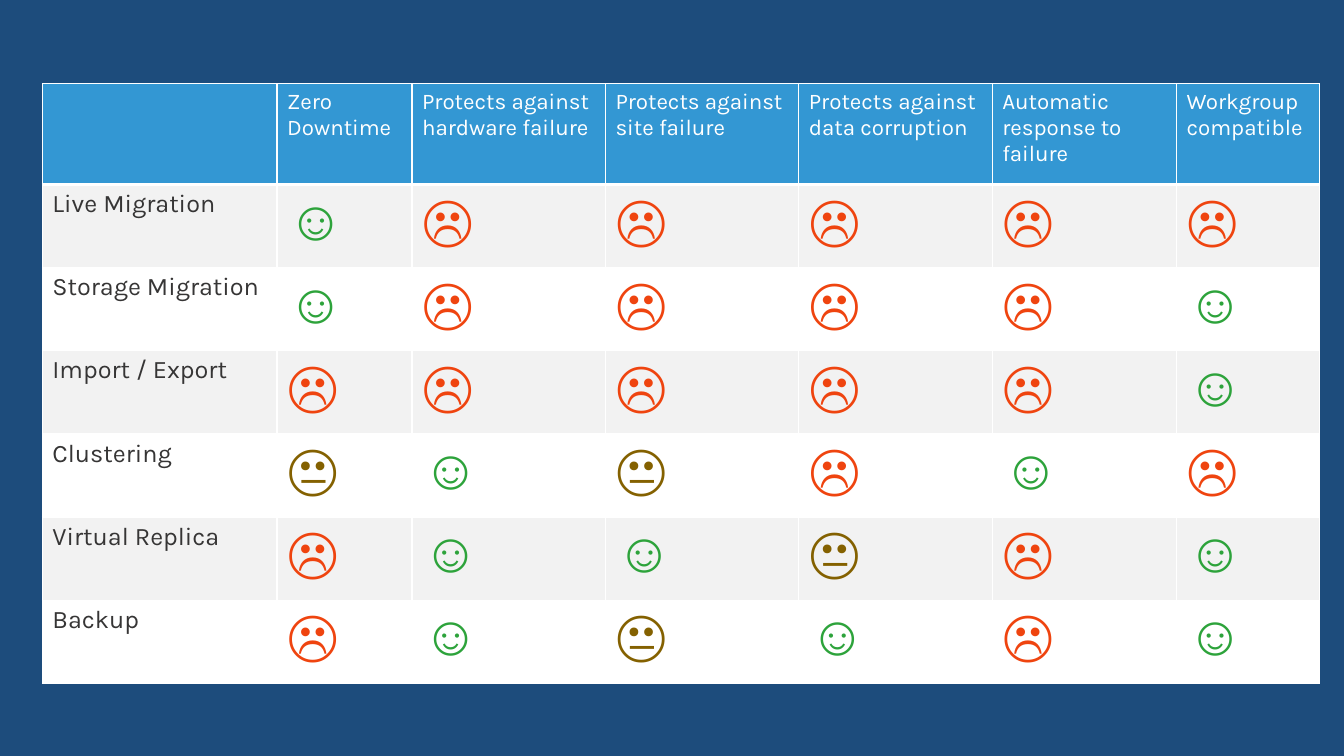
from dataclasses import dataclass

import pptx
import pptx.dml.color
import pptx.oxml
import pptx.oxml.ns
import pptx.util
from pptx.util import Inches


@dataclass(frozen=True)
class Theme:
    background: str = "1D4C7C"
    header: str = "3397D3"
    bands: tuple = ("F2F2F2", "FFFFFF")
    white: str = "FFFFFF"
    label: str = "363535"
    good: str = "2DA33B"
    partial: str = "846100"
    bad: str = "EF440F"
    text_font: str = "Karla"
    face_font: str = "Arial"
    header_size: int = 16
    label_size: int = 18
    face_size: int = 40


THEME = Theme()

FACES = {
    "+": ("☺", THEME.good),
    "o": ("😐", THEME.partial),
    "-": ("☹", THEME.bad),
}

CRITERIA = [
    "Zero Downtime",
    "Protects against hardware failure",
    "Protects against site failure",
    "Protects against data corruption",
    "Automatic response to failure",
    "Workgroup compatible",
]

# One mark per criterion
RATINGS = {
    "Live Migration": "+-----",
    "Storage Migration": "+----+",
    "Import / Export": "-----+",
    "Clustering": "o+o-+-",
    "Virtual Replica": "-++o-+",
    "Backup": "-+o+-+",
}

COLUMN_WIDTHS = [2.33, 1.34, 1.92, 1.92, 1.92, 1.83, 1.42]
HEADER_HEIGHT = 1


def rgb(color):
    return pptx.dml.color.RGBColor.from_string(color)


def set_borders(cell, bottom_width):
    """Draw white borders, 1 pt wide except for the bottom one."""
    properties = cell._tc.get_or_add_tcPr()
    for side, width in (("L", 1), ("R", 1), ("T", 1), ("B", bottom_width)):
        properties.append(pptx.oxml.parse_xml(
            f'<a:ln{side} {pptx.oxml.ns.nsdecls("a")} w="{pptx.util.Pt(width)}">'
            f'<a:solidFill><a:srgbClr val="{THEME.white}"/></a:solidFill></a:ln{side}>'
        ))


def style_cell(cell, fill, bottom_width=1):
    set_borders(cell, bottom_width)
    cell.fill.solid()
    cell.fill.fore_color.rgb = rgb(fill)


def write_cell(cell, text, font_name, size, color, bold=False):
    run = cell.text_frame.paragraphs[0].add_run()
    run.text = text
    run.font.name = font_name
    run.font.size = pptx.util.Pt(size)
    run.font.bold = bold
    run.font.color.rgb = rgb(color)


def fill_header(table):
    for cell in table.rows[0].cells:
        style_cell(cell, THEME.header, bottom_width=3)
    for column, criterion in enumerate(CRITERIA, start=1):
        write_cell(table.cell(0, column), criterion, THEME.text_font,
                   THEME.header_size, THEME.white)


def fill_ratings(table):
    for row, (method, marks) in enumerate(RATINGS.items(), start=1):
        for cell in table.rows[row].cells:
            style_cell(cell, THEME.bands[(row - 1) % 2])
        write_cell(table.cell(row, 0), method, THEME.text_font,
                   THEME.label_size, THEME.label)
        for column, mark in enumerate(marks, start=1):
            face, color = FACES[mark]
            write_cell(table.cell(row, column), face, THEME.face_font,
                       THEME.face_size, color, bold=True)


def add_comparison_table(slide, left, top, width, height):
    """Place the table in a box given in inches."""
    table = slide.shapes.add_table(
        len(RATINGS) + 1, len(COLUMN_WIDTHS),
        Inches(left), Inches(top), Inches(width), Inches(height),
    ).table
    scale = width / sum(COLUMN_WIDTHS)
    for column, column_width in zip(table.columns, COLUMN_WIDTHS):
        column.width = Inches(column_width * scale)
    rating_height = (height - HEADER_HEIGHT) / len(RATINGS)
    for index, row in enumerate(table.rows):
        row.height = Inches(rating_height if index else HEADER_HEIGHT)
    fill_header(table)
    fill_ratings(table)


def main():
    presentation = pptx.Presentation()
    presentation.slide_width = Inches(13.33)
    presentation.slide_height = Inches(7.5)
    slide = presentation.slides.add_slide(presentation.slide_layouts[6])
    slide.background.fill.solid()
    slide.background.fill.fore_color.rgb = rgb(THEME.background)
    add_comparison_table(slide, 0.42, 0.83, 12.67, 5.95)
    presentation.save("out.pptx")


if __name__ == "__main__":
    main()
